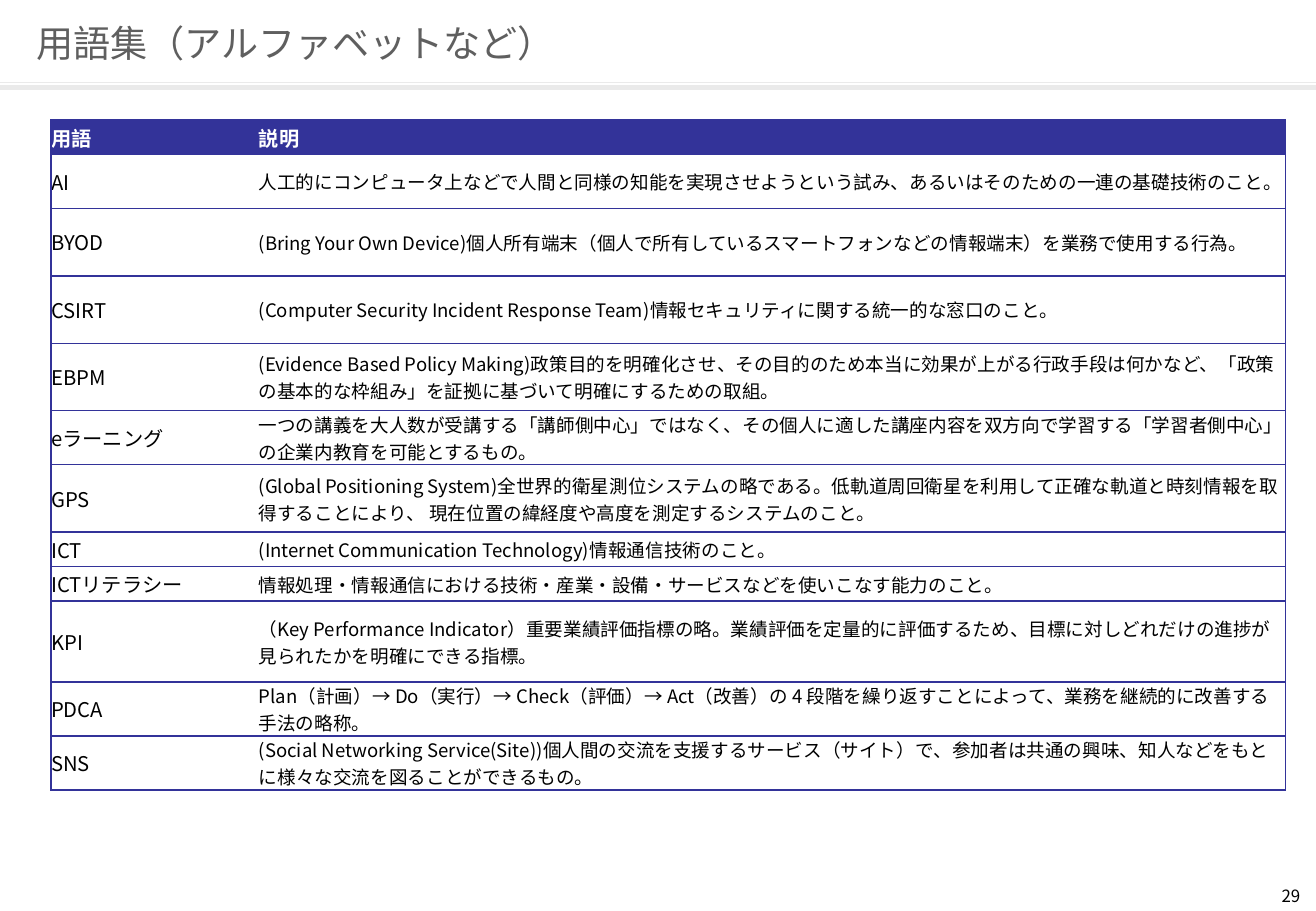
from dataclasses import dataclass

from lxml.etree import SubElement
from pptx import Presentation
from pptx.dml.color import RGBColor
from pptx.enum.shapes import MSO_CONNECTOR, MSO_SHAPE
from pptx.enum.text import MSO_ANCHOR, PP_ALIGN
from pptx.oxml.ns import qn
from pptx.util import Cm, Pt


@dataclass(frozen=True)
class Theme:
    font: str = "Noto Sans CJK JP"
    title_color: str = "5F5F5F"
    rule_color: str = "EAEAEA"
    accent: str = "333399"
    paper: str = "FFFFFF"
    ink: str = "000000"
    title_size: int = 22
    term_size: int = 12
    description_size: int = 11
    page_number_size: int = 10


THEME = Theme()
PAGE_WIDTH, PAGE_HEIGHT = Cm(27.51), Cm(19.05)
NO_MARGINS = dict.fromkeys(("margin_left", "margin_top", "margin_right", "margin_bottom"), 0)
COLUMN_WIDTHS = (4.34, 21.46)
COLUMN_BORDERS = (("L", "T", "B"), ("R", "T", "B"))
HEADINGS = ("用語", "説明")
SINGLE, DOUBLE, ROOMY, TALL = 0.72, 1.13, 1.41, 1.69

GLOSSARY = (
    (DOUBLE, "AI", "人工的にコンピュータ上などで人間と同様の知能を実現させようという試み、あるいはそのための一連の基礎技術のこと。"),
    (ROOMY, "BYOD", "(Bring Your Own Device)個人所有端末（個人で所有しているスマートフォンなどの情報端末）を業務で使用する行為。"),
    (ROOMY, "CSIRT", "(Computer Security Incident Response Team)情報セキュリティに関する統一的な窓口のこと。"),
    (ROOMY, "EBPM", "(Evidence Based Policy Making)政策目的を明確化させ、その目的のため本当に効果が上がる行政手段は何かなど、「政策の基本的な枠組み」を証拠に基づいて明確にするための取組。"),
    (DOUBLE, "eラーニング", "一つの講義を大人数が受講する「講師側中心」ではなく、その個人に適した講座内容を双方向で学習する「学習者側中心」の企業内教育を可能とするもの。"),
    (ROOMY, "GPS", "(Global Positioning System)全世界的衛星測位システムの略である。低軌道周回衛星を利用して正確な軌道と時刻情報を取得することにより、 現在位置の緯経度や高度を測定するシステムのこと。"),
    (SINGLE, "ICT", "(Internet Communication Technology)情報通信技術のこと。"),
    (SINGLE, "ICTリテラシー", "情報処理・情報通信における技術・産業・設備・サービスなどを使いこなす能力のこと。"),
    (TALL, "KPI", "（Key Performance Indicator）重要業績評価指標の略。業績評価を定量的に評価するため、目標に対しどれだけの進捗が見られたかを明確にできる指標。"),
    (DOUBLE, "PDCA", "Plan（計画）→ Do（実行）→ Check（評価）→ Act（改善）の 4 段階を繰り返すことによって、業務を継続的に改善する手法の略称。"),
    (DOUBLE, "SNS", "(Social Networking Service(Site))個人間の交流を支援するサービス（サイト）で、参加者は共通の興味、知人などをもとに様々な交流を図ることができるもの。"),
)


def apply_format(target, values):
    for name, value in values.items():
        setattr(target, name, value)


def write_text(frame, text, size, color, bold=False, **para_format):
    para = frame.paragraphs[0]
    apply_format(para, para_format)
    span = para.add_run()
    span.text = text
    apply_format(span.font, {"name": THEME.font, "size": Pt(size), "bold": bold})
    span.font.color.rgb = RGBColor.from_string(color)
    SubElement(span.font._element, qn("a:ea"), typeface=THEME.font)


def add_title(page, text):
    title = page.shapes.title
    apply_format(title, {"left": Cm(0.76), "top": Cm(0.53), "width": Cm(25.2), "height": Cm(1.09)})
    apply_format(title.text_frame, {**NO_MARGINS, "word_wrap": True, "vertical_anchor": MSO_ANCHOR.TOP})
    write_text(title.text_frame, text, THEME.title_size, THEME.title_color,
               alignment=PP_ALIGN.LEFT, line_spacing=0.9)


def add_title_rules(page):
    color = RGBColor.from_string(THEME.rule_color)
    rule = page.shapes.add_connector(MSO_CONNECTOR.STRAIGHT, 0, Cm(1.73), PAGE_WIDTH, Cm(1.73))
    rule.line.width = Pt(0.75)
    rule.line.color.rgb = color
    SubElement(rule._element.spPr, qn("a:effectLst"))
    band = page.shapes.add_shape(MSO_SHAPE.RECTANGLE, 0, Cm(1.78), PAGE_WIDTH, Cm(0.1))
    band.shadow.inherit = False
    band.fill.solid()
    band.fill.fore_color.rgb = color
    band.line.fill.background()


def set_borders(cell, visible_sides):
    properties = cell._tc.get_or_add_tcPr()
    for side in "LRTB":
        border = SubElement(properties, qn(f"a:ln{side}"), w=str(Pt(1)))
        if side in visible_sides:
            fill = SubElement(border, qn("a:solidFill"))
            SubElement(fill, qn("a:srgbClr"), val=THEME.accent)
        else:
            SubElement(border, qn("a:noFill"))


def fill_cell(cell, text, size, ink, paper, bold, borders):
    apply_format(cell, {**NO_MARGINS, "vertical_anchor": MSO_ANCHOR.MIDDLE})
    set_borders(cell, borders)
    cell.fill.solid()
    cell.fill.fore_color.rgb = RGBColor.from_string(paper)
    write_text(cell.text_frame, text, size, ink, bold, line_spacing=1.0)


def add_glossary(page):
    rows = ((SINGLE, *HEADINGS), *GLOSSARY)
    height = sum(row[0] for row in rows)
    table = page.shapes.add_table(
        len(rows), len(COLUMN_WIDTHS), Cm(1.07), Cm(2.51), Cm(sum(COLUMN_WIDTHS)), Cm(height)
    ).table
    table.horz_banding = False
    for column, width in zip(table.columns, COLUMN_WIDTHS):
        column.width = Cm(width)
    for index, (row_height, *texts) in enumerate(rows):
        table.rows[index].height = Cm(row_height)
        heading = index == 0
        ink, paper = (THEME.paper, THEME.accent) if heading else (THEME.ink, THEME.paper)
        sizes = (THEME.term_size, THEME.term_size if heading else THEME.description_size)
        for column, (text, size, borders) in enumerate(zip(texts, sizes, COLUMN_BORDERS)):
            fill_cell(table.cell(index, column), text, size, ink, paper, heading, borders)


def add_page_number(page, number):
    box = page.shapes.add_textbox(Cm(20.75), Cm(18.52), Cm(6.43), Cm(0.51))
    apply_format(box.text_frame, {**NO_MARGINS, "word_wrap": True})
    write_text(box.text_frame, number, THEME.page_number_size, THEME.ink, alignment=PP_ALIGN.RIGHT)


def main():
    deck = Presentation()
    apply_format(deck, {"slide_width": PAGE_WIDTH, "slide_height": PAGE_HEIGHT})
    page = deck.slides.add_slide(deck.slide_layouts[5])
    add_title_rules(page)
    add_title(page, "用語集（アルファベットなど）")
    add_glossary(page)
    add_page_number(page, "29")
    deck.save("out.pptx")


if __name__ == "__main__":
    main()
